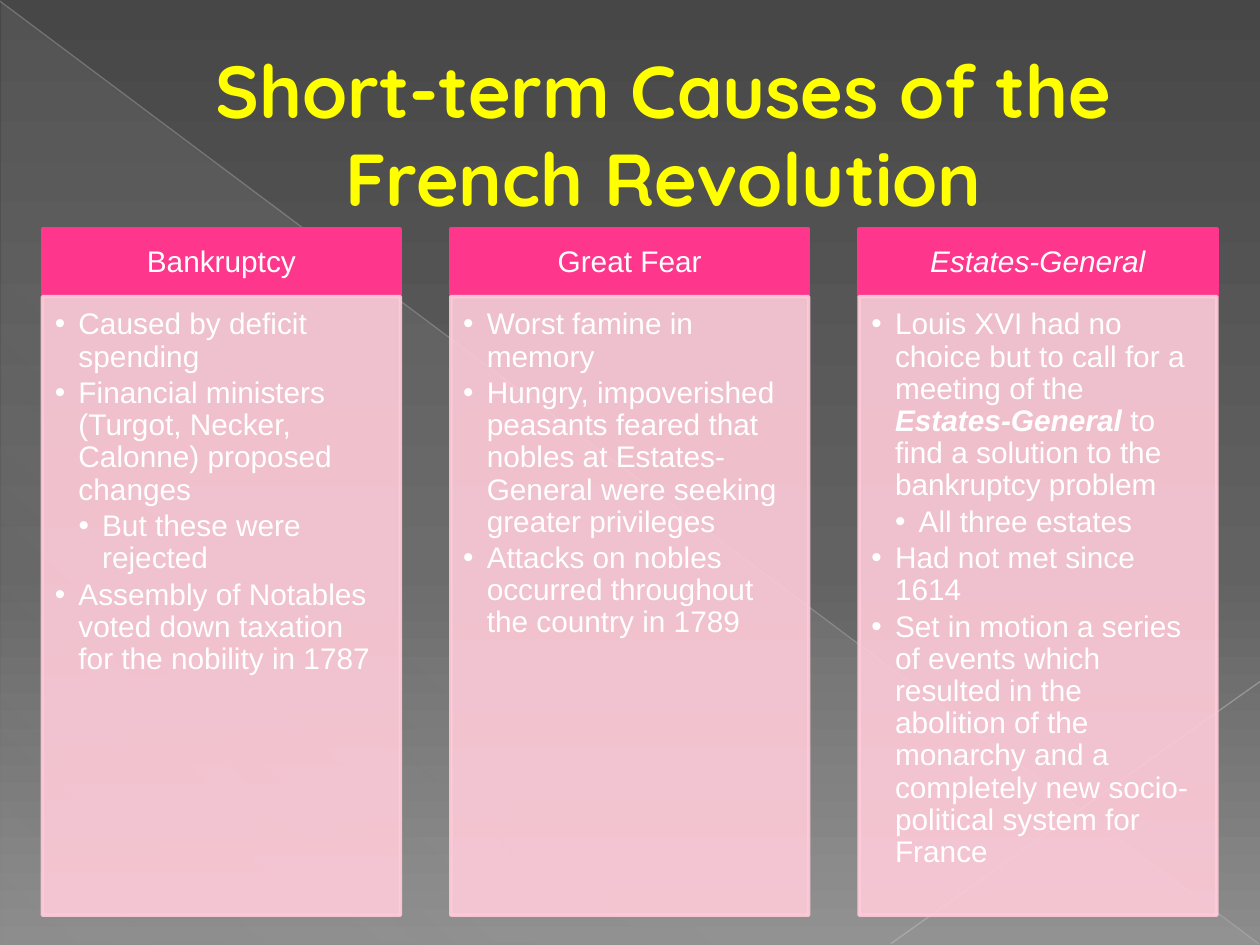
from lxml.etree import SubElement
from pptx import Presentation
from pptx.dml.color import RGBColor
from pptx.enum.shapes import MSO_CONNECTOR, MSO_SHAPE
from pptx.enum.text import MSO_ANCHOR, MSO_AUTO_SIZE, PP_ALIGN
from pptx.oxml.ns import qn
from pptx.util import Pt

YELLOW = RGBColor(0xFF, 0xFF, 0x00)
WHITE = RGBColor(0xFF, 0xFF, 0xFF)
PINK = RGBColor(0xFF, 0x37, 0x8C)
PALE_PINK = RGBColor(0xFF, 0xCB, 0xD9)
GREY = RGBColor(0xBE, 0xBE, 0xBE)
LIGHT_GREY = RGBColor(0xC5, 0xC5, 0xC5)

TITLE = "Short-term Causes of the French Revolution"

# Each cause: heading, heading in italics, points as (level, runs);
# a run is (text, emphasised).
CAUSES = [
    ("Bankruptcy", False, [
        (0, [("Caused by deficit spending", False)]),
        (0, [("Financial ministers (Turgot, Necker, Calonne) proposed changes", False)]),
        (1, [("But these were rejected", False)]),
        (0, [("Assembly of Notables voted down taxation for the nobility in 1787", False)]),
    ]),
    ("Great Fear", False, [
        (0, [("Worst famine in memory", False)]),
        (0, [("Hungry, impoverished peasants feared that nobles at "
              "Estates-General were seeking greater privileges", False)]),
        (0, [("Attacks on nobles occurred throughout the country in 1789", False)]),
    ]),
    ("Estates-General", True, [
        (0, [("Louis XVI had no choice but to call for a meeting of the ", False),
             ("Estates-General ", True),
             ("to find a solution to the bankruptcy problem", False)]),
        (1, [("All three estates", False)]),
        (0, [("Had not met since 1614", False)]),
        (0, [("Set in motion a series of events which resulted in the abolition of the "
              "monarchy and a completely new socio-political system for France", False)]),
    ]),
]

# Gradient stops: position %, colour, opacity %
BACKDROP = [(0, "474747", 100), (60, "626262", 100), (100, "8C8C8C", 100)]
SHEEN = [(0, "D2D2D2", 10), (70, "D2D2D2", 8), (100, "D2D2D2", 1)]

# Diagonals: start, end, colour, opacity %
DIAGONALS = [
    ((0, 0.7), (719.3, 539.3), GREY, 35),
    ((720, 389.5), (509, 539.3), LIGHT_GREY, 45),
]

LEFT, COLUMN_WIDTH, COLUMN_STEP = 24.3, 204.5, 233.3
HEADING_TOP, HEADING_HEIGHT = 131, 38.5
POINTS_TOP, POINTS_HEIGHT = 169.5, 353.5
INDENT = 13.5


def set_opacity(fill_parent, percent):
    colour = next(fill_parent.iter(qn("a:srgbClr")))
    SubElement(colour, qn("a:alpha"), val=str(percent * 1000))


def set_gradient(fill, owner, stops, angle):
    """Fill with any number of stops; angle is clockwise in degrees."""
    fill.gradient()
    gradient = next(owner.iter(qn("a:gradFill")))
    for child in list(gradient):
        gradient.remove(child)
    stop_list = SubElement(gradient, qn("a:gsLst"))
    for position, colour, opacity in stops:
        stop = SubElement(stop_list, qn("a:gs"), pos=str(position * 1000))
        SubElement(stop, qn("a:srgbClr"), val=colour)
        set_opacity(stop, opacity)
    SubElement(gradient, qn("a:lin"), ang=str(angle * 60000), scaled="0")


def add_diagonal(shapes, start, end, colour, opacity):
    diagonal = shapes.add_connector(
        MSO_CONNECTOR.STRAIGHT, *(Pt(length) for length in start + end))
    diagonal.line.width = Pt(0.75)
    diagonal.line.color.rgb = colour
    properties = diagonal.element.spPr
    set_opacity(properties, opacity)
    SubElement(properties, qn("a:effectLst"))


def add_box(shapes, left, top, height, colour, margins, anchor):
    box = shapes.add_shape(
        MSO_SHAPE.RECTANGLE, Pt(left), Pt(top), Pt(COLUMN_WIDTH), Pt(height))
    box.shadow.inherit = False
    box.fill.solid()
    box.fill.fore_color.rgb = colour
    box.line.color.rgb = colour
    box.line.width = Pt(2)
    frame = box.text_frame
    frame.word_wrap = True
    frame.vertical_anchor = anchor
    (frame.margin_left, frame.margin_top,
     frame.margin_right, frame.margin_bottom) = (Pt(m) for m in margins)
    return box


def add_run(paragraph, text, bold=False, italic=False):
    run = paragraph.add_run()
    run.text = text
    font = run.font
    font.name, font.size, font.color.rgb = "Arial", Pt(17), WHITE
    font.bold, font.italic = bold, italic


def add_bullet(paragraph, level):
    paragraph.level = level
    properties = paragraph._p.get_or_add_pPr()
    properties.set("marL", str(Pt(INDENT * (level + 1))))
    properties.set("indent", str(Pt(-INDENT)))
    bullet_colour = SubElement(properties, qn("a:buClr"))
    SubElement(bullet_colour, qn("a:srgbClr"), val=str(WHITE))
    SubElement(properties, qn("a:buFont"), typeface="Arial")
    SubElement(properties, qn("a:buChar"), char="•")


def add_cause(shapes, left, heading, italic, points):
    heading_box = add_box(shapes, left, HEADING_TOP, HEADING_HEIGHT, PINK,
                          (9.5, 5.5, 9.5, 5.5), MSO_ANCHOR.MIDDLE)
    paragraph = heading_box.text_frame.paragraphs[0]
    paragraph.alignment = PP_ALIGN.CENTER
    paragraph.line_spacing = 0.9
    add_run(paragraph, heading, italic=italic)

    points_box = add_box(shapes, left, POINTS_TOP, POINTS_HEIGHT, PALE_PINK,
                         (7.2, 7.2, 9.5, 10.8), MSO_ANCHOR.TOP)
    properties = points_box.element.spPr
    set_opacity(properties.find(qn("a:solidFill")), 90)
    set_opacity(properties.find(qn("a:ln")), 90)
    frame = points_box.text_frame
    for index, (level, runs) in enumerate(points):
        paragraph = frame.add_paragraph() if index else frame.paragraphs[0]
        paragraph.alignment = PP_ALIGN.LEFT
        paragraph.line_spacing = 0.9
        paragraph.space_before = Pt(2.5 if index else 0)
        add_bullet(paragraph, level)
        for text, emphasised in runs:
            add_run(paragraph, text, emphasised, emphasised)


def format_title(title):
    title.left, title.top, title.width, title.height = Pt(36), Pt(21), Pt(648), Pt(110)
    frame = title.text_frame
    frame.word_wrap = True
    frame.auto_size = MSO_AUTO_SIZE.TEXT_TO_FIT_SHAPE
    frame.vertical_anchor = MSO_ANCHOR.MIDDLE
    paragraph = frame.paragraphs[0]
    paragraph.alignment = PP_ALIGN.CENTER
    properties = paragraph._p.get_or_add_pPr()
    properties.set("marL", str(Pt(38)))
    properties.set("indent", "0")
    run = paragraph.add_run()
    run.text = TITLE
    font = run.font
    font.name, font.size, font.bold = "Quicksand", Pt(42), True
    font.color.rgb = YELLOW


def main():
    deck = Presentation()
    deck.slide_width, deck.slide_height = Pt(720), Pt(540)
    slide = deck.slides.add_slide(deck.slide_layouts[5])
    shapes = slide.shapes
    set_gradient(slide.background.fill, slide.element, BACKDROP, 90)

    sheen = shapes.add_shape(
        MSO_SHAPE.RIGHT_TRIANGLE, Pt(0.7), Pt(1.4), Pt(719.3), Pt(538.6))
    sheen.shadow.inherit = False
    sheen.line.fill.background()
    set_gradient(sheen.fill, sheen.element, SHEEN, 133)
    for diagonal in DIAGONALS:
        add_diagonal(shapes, *diagonal)

    title = shapes.title
    format_title(title)
    shapes.element.append(title.element)  # in front of the backdrop
    for column, cause in enumerate(CAUSES):
        add_cause(shapes, LEFT + column * COLUMN_STEP, *cause)
    deck.save("out.pptx")


if __name__ == "__main__":
    main()
